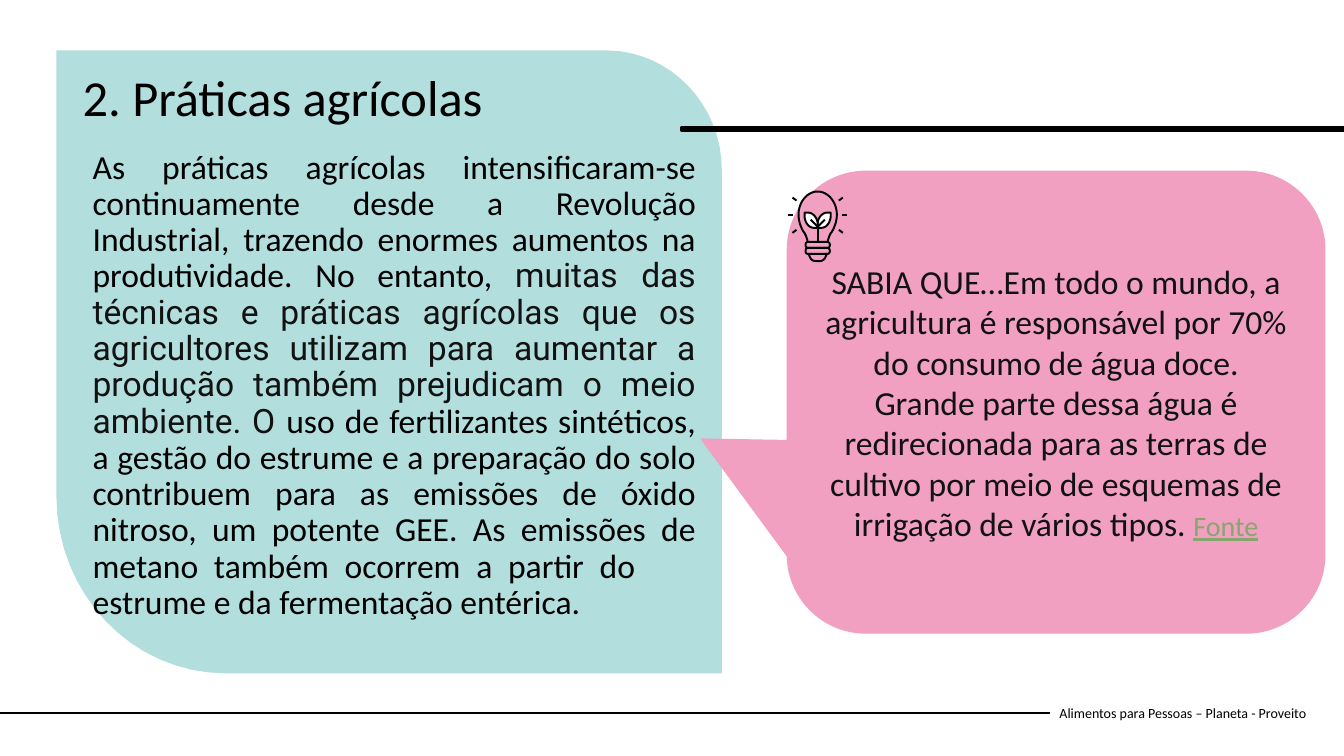
import lxml.etree
import pptx
import pptx.dml.color
import pptx.enum.shapes
import pptx.enum.text
import pptx.oxml.ns
import pptx.util

PX = 9144
COLORS = {"teal": "B2DEDD", "pink": "F1A0C2", "black": "000000", "ink": "121212",
          "icon": "010101", "white": "FFFFFF", "link": "87A66E"}
ALIGN = pptx.enum.text.PP_ALIGN
ANCHOR = pptx.enum.text.MSO_ANCHOR
SHAPES = pptx.enum.shapes.MSO_SHAPE

HEADING = "2. Práticas agrícolas"
FOOTER = "Alimentos para Pessoas – Planeta - Proveito"
PRACTICES = [
    ("As práticas agrícolas intensificaram-se continuamente desde a Revolução "
     "Industrial, trazendo enormes aumentos na produtividade. No entanto, ",
     "black", {"size": 24}),
    ("muitas das técnicas e práticas agrícolas que os agricultores utilizam para "
     "aumentar a produção também prejudicam o meio ambiente. O ",
     "ink", {"size": 24, "name": "Roboto"}),
    ("uso de fertilizantes sintéticos, a gestão do estrume e a preparação do solo "
     "contribuem para as emissões de óxido nitroso, um potente GEE. As emissões de "
     "metano também ocorrem a partir do \testrume e da fermentação entérica.",
     "black", {"size": 24}),
]
WATER_FACT = [
    ("SABIA QUE…Em todo o mundo, a agricultura é responsável por 70% do consumo de "
     "água doce. Grande parte dessa água é redirecionada para as terras de cultivo "
     "por meio de esquemas de irrigação de vários tipos. ", "ink", {"size": 24}),
    ("Fonte", "link", {"size": 20, "underline": True}),
]

PANEL = [(716, 668), (224, 668), (131, 668, 56, 589, 56, 492), (56, 50),
         (601, 50), (664, 50, 716, 103, 716, 169), (716, 668)]
BULB = [(801, 239), (800, 236, 799, 232, 797, 230), (794, 225, 792, 219, 792, 213),
        (792, 200, 801, 190, 811, 190), (821, 190, 830, 200, 830, 213),
        (830, 219, 828, 225, 825, 230), (823, 232, 822, 236, 821, 239)]
CAP = [(802, 251), (803, 256, 805, 259, 809, 259), (813, 259),
       (817, 259, 819, 256, 820, 251)]
LEAF = [(811, 226), (811, 222), (811, 216, 816, 211, 820, 211), (824, 211),
        (824, 214), (824, 220, 820, 226, 815, 226), (811, 226)]
LEAF_VEIN = (818, 218, 811, 225)
RAYS = [(835, 213, 840, 213), (832, 228, 836, 231), (832, 199, 836, 196)]
BULB_AXIS = 811


def emu(*lengths):
    """Convert px lengths to EMU."""
    return [round(length * PX) for length in lengths]


def rgb(color):
    """Return the named colour."""
    return pptx.dml.color.RGBColor.from_string(COLORS[color])


def apply(target, values):
    """Set attributes on a target from a dict of format values."""
    for key, value in values.items():
        setattr(target, key, value)


def paint(shape, fill, line=None, width=1):
    """Give a shape its fill and outline, without shadow."""
    shape.shadow.inherit = False
    if fill:
        shape.fill.solid()
        shape.fill.fore_color.rgb = rgb(fill)
    else:
        shape.fill.background()
    if line:
        shape.line.color.rgb = rgb(line)
        shape.line.width = pptx.util.Pt(width)
    else:
        shape.line.fill.background()


def write(shape, runs, frame_format, paragraph_format):
    """Fill a shape with one paragraph of styled runs."""
    frame = shape.text_frame
    apply(frame, {"word_wrap": True,
                  "auto_size": pptx.enum.text.MSO_AUTO_SIZE.NONE, **frame_format})
    paragraph = frame.paragraphs[0]
    apply(paragraph, {"space_before": pptx.util.Pt(0), **paragraph_format})
    for text, color, font_format in runs:
        run = paragraph.add_run()
        run.text = text
        size = pptx.util.Pt(font_format["size"])
        apply(run.font, {"name": "Calibri", **font_format, "size": size})
        run.font.color.rgb = rgb(color)


def add_rule(slide, ends, color, width):
    """Draw a straight line between two points."""
    rule = slide.shapes.add_connector(
        pptx.enum.shapes.MSO_CONNECTOR.STRAIGHT, *emu(*ends))
    rule.line.color.rgb = rgb(color)
    rule.line.width = pptx.util.Pt(width)
    properties = rule.element.spPr
    lxml.etree.SubElement(properties, pptx.oxml.ns.qn("a:effectLst"))


def curve_points(start, curve, steps=16):
    """Sample a cubic curve after its start point."""
    x1, y1, x2, y2, x3, y3 = curve
    for step in range(1, steps + 1):
        t = step / steps
        u = 1 - t
        weights = (u ** 3, 3 * u * u * t, 3 * u * t * t, t ** 3)
        yield tuple(sum(w * value for w, value in zip(weights, values))
                    for values in ((start[0], x1, x2, x3), (start[1], y1, y2, y3)))


def add_outline(slide, path_steps, fill, line=None, width=1.4):
    """Build an outline from points and cubic curves."""
    points = [path_steps[0]]
    for step in path_steps[1:]:
        if len(step) == 2:
            points.append(step)
        else:
            points.extend(curve_points(points[-1], step))
    builder = slide.shapes.build_freeform(*emu(*points[0]), scale=1.0)
    builder.add_line_segments([emu(*point) for point in points[1:]],
                              close=points[0] == points[-1])
    paint(builder.convert_to_shape(), fill, line, width)


def mirror(step):
    """Reflect a step across the bulb axis."""
    return tuple(2 * BULB_AXIS - value if index % 2 == 0 else value
                 for index, value in enumerate(step))


def add_bulb(slide):
    """Draw the light bulb with a sprout inside."""
    add_outline(slide, BULB, None, "icon")
    add_outline(slide, CAP, None, "icon")
    for top in (240, 246):
        ring = slide.shapes.add_shape(SHAPES.ROUNDED_RECTANGLE, *emu(799, top, 24, 6))
        ring.adjustments[0] = 0.4
        paint(ring, None, "icon", 1.4)
    add_rule(slide, (BULB_AXIS, 222, BULB_AXIS, 240), "icon", 1.4)
    for side in (tuple, mirror):
        add_outline(slide, [side(step) for step in LEAF], "white", "icon")
        for ends in [LEAF_VEIN, *RAYS]:
            add_rule(slide, side(ends), "icon", 1.4)


def add_text(slide, box, runs, frame_format, paragraph_format):
    """Add a text box with one paragraph."""
    write(slide.shapes.add_textbox(*emu(*box)), runs, frame_format, paragraph_format)


def add_heading(slide):
    """Place the title above the panel."""
    heading = slide.shapes.title
    apply(heading, dict(zip(("left", "top", "width", "height"),
                            emu(72, 67, 546, 109))))
    write(heading, [(HEADING, "black", {"size": 36})],
          {"vertical_anchor": ANCHOR.TOP},
          {"alignment": ALIGN.LEFT, "line_spacing": 0.9})
    heading.element.getparent().append(heading.element)


def add_callout(slide):
    """Add the speech bubble about water use."""
    callout = slide.shapes.add_shape(SHAPES.ROUNDED_RECTANGULAR_CALLOUT,
                                     *emu(781, 170, 533, 458))
    for index, value in enumerate((-0.66, 0.08, 0.17)):
        callout.adjustments[index] = value
    paint(callout, "pink", "pink")
    write(callout, WATER_FACT, {"vertical_anchor": ANCHOR.MIDDLE},
          {"alignment": ALIGN.CENTER})


def main():
    """Build the slide and save it."""
    deck = pptx.Presentation()
    deck.slide_width, deck.slide_height = emu(1333, 750)
    slide = deck.slides.add_slide(deck.slide_layouts[5])
    add_text(slide, (1041, 687, 273, 40), [(FOOTER, "black", {"size": 10})],
             {"vertical_anchor": ANCHOR.MIDDLE}, {"alignment": ALIGN.LEFT})
    add_rule(slide, (0, 707, 1041, 707), "black", 1.5)
    add_outline(slide, PANEL, "teal")
    bar = slide.shapes.add_shape(SHAPES.RECTANGLE, *emu(676, 126, 657, 4))
    paint(bar, "black", "black", 1.93)
    add_text(slide, (82, 144, 618, 331), PRACTICES, {"vertical_anchor": ANCHOR.TOP},
             {"alignment": ALIGN.JUSTIFY, "line_spacing": 0.9})
    add_heading(slide)
    add_callout(slide)
    add_bulb(slide)
    deck.save("out.pptx")


if __name__ == "__main__":
    main()
